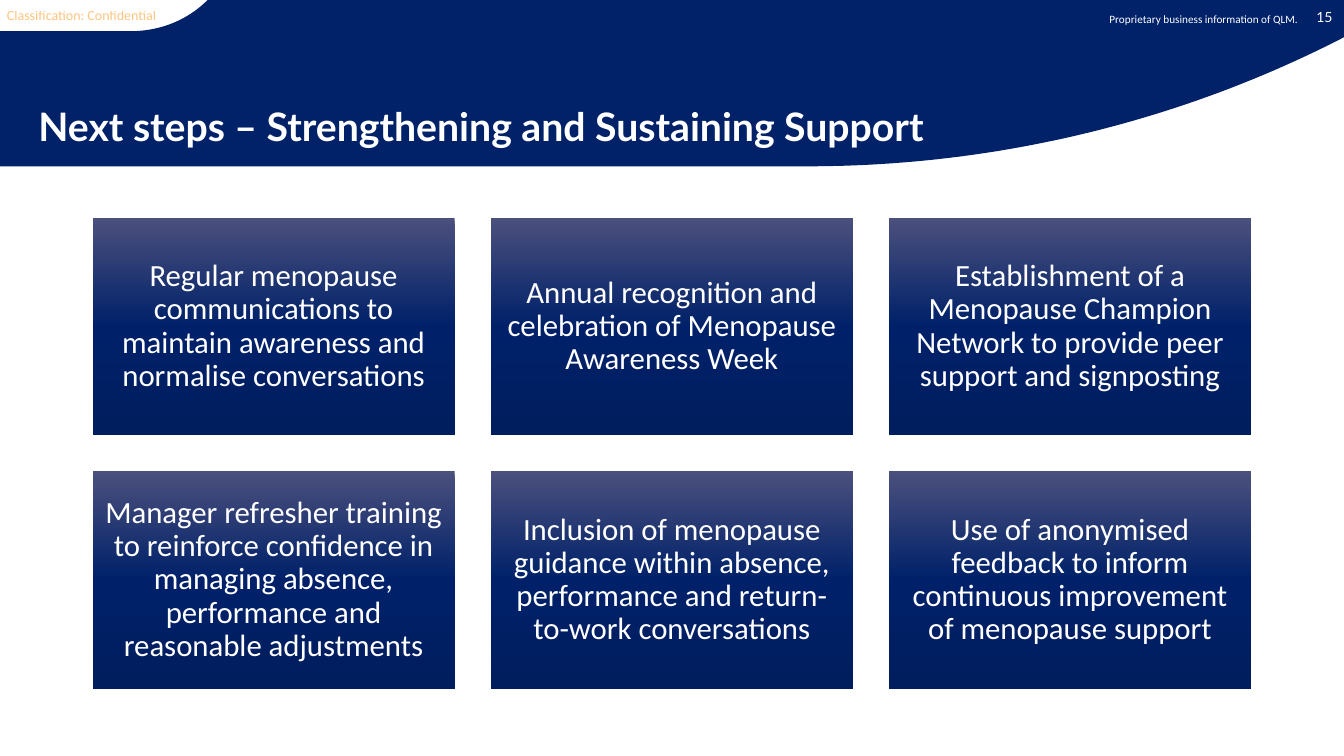
from copy import deepcopy

from lxml.etree import SubElement
from pptx import Presentation
from pptx.dml.color import RGBColor
from pptx.enum.shapes import MSO_SHAPE
from pptx.enum.text import MSO_ANCHOR, MSO_AUTO_SIZE, PP_ALIGN
from pptx.oxml.ns import qn
from pptx.util import Pt

COLORS = {
    "navy": "012169",
    "white": "FFFFFF",
    "orange": "FF8C00",
    "card_top": "4B507C",
    "card_middle": "00216A",
    "card_bottom": "001D5E",
}

NEXT_STEPS = [
    "Regular menopause communications to maintain awareness and normalise conversations",
    "Annual recognition and celebration of Menopause Awareness Week",
    "Establishment of a Menopause Champion Network to provide peer support and signposting",
    "Manager refresher training to reinforce confidence in managing absence, "
    "performance and reasonable adjustments",
    "Inclusion of menopause guidance within absence, performance and return-to-work conversations",
    "Use of anonymised feedback to inform continuous improvement of menopause support",
]


def color(name):
    return RGBColor.from_string(COLORS[name])


def write_text(shape, text, size=10, font="Calibri", fill="white", opacity=None, bold=False,
               align=PP_ALIGN.LEFT, anchor=MSO_ANCHOR.TOP, insets=(0, 0), line_spacing=1.0):
    """Fill a shape with one formatted paragraph; insets are (side, top and bottom)."""
    frame = shape.text_frame
    frame.word_wrap = True
    frame.auto_size = MSO_AUTO_SIZE.NONE
    frame.vertical_anchor = anchor
    frame.margin_left = frame.margin_right = Pt(insets[0])
    frame.margin_top = frame.margin_bottom = Pt(insets[1])
    paragraph = frame.paragraphs[0]
    paragraph.alignment = align
    paragraph.line_spacing = line_spacing
    run = paragraph.add_run()
    run.text = text
    run.font.name = font
    run.font.size = Pt(size)
    run.font.bold = bold
    run.font.color.rgb = color(fill)
    if opacity is not None:
        color_element = run.font._element.find(".//" + qn("a:srgbClr"))
        SubElement(color_element, qn("a:alpha"), val=str(opacity * 1000))


def curve(start, control_1, control_2, end, steps=48):
    """Points along a cubic curve, after its start."""
    points = []
    for step in range(1, steps + 1):
        t = step / steps
        weights = ((1 - t) ** 3, 3 * t * (1 - t) ** 2, 3 * t ** 2 * (1 - t), t ** 3)
        corners = (start, control_1, control_2, end)
        points.append(tuple(sum(w * corner[axis] for w, corner in zip(weights, corners))
                            for axis in (0, 1)))
    return points


class SlideBuilder:
    gradient = [(0, "card_top"), (0.5, "card_middle"), (1, "card_bottom")]

    def __init__(self, slide):
        self.slide = slide

    def banner(self, start, points):
        builder = self.slide.shapes.build_freeform(Pt(start[0]), Pt(start[1]), scale=1.0)
        builder.add_line_segments([(Pt(x), Pt(y)) for x, y in points], close=True)
        shape = builder.convert_to_shape()
        shape.shadow.inherit = False
        shape.fill.solid()
        shape.fill.fore_color.rgb = color("navy")
        shape.line.fill.background()

    def title(self, text, left, top, width, height, **text_format):
        shape = self.slide.shapes.title
        shape.left, shape.top, shape.width, shape.height = map(Pt, (left, top, width, height))
        write_text(shape, text, **text_format)

    def label(self, text, left, top, width, height, **text_format):
        shape = self.slide.shapes.add_textbox(*map(Pt, (left, top, width, height)))
        write_text(shape, text, **text_format)

    def card(self, text, left, top, width, height):
        shape = self.slide.shapes.add_shape(
            MSO_SHAPE.RECTANGLE, *map(Pt, (left, top, width, height)))
        shape.shadow.inherit = False
        shape.line.fill.background()
        shape.fill.gradient()
        shape.fill.gradient_angle = 270
        # The default gradient has two stops; a third is added
        stop_list = shape._element.spPr.find(".//" + qn("a:gsLst"))
        stop_list.append(deepcopy(stop_list[0]))
        for stop, (position, name) in zip(shape.fill.gradient_stops, self.gradient):
            stop.position = position
            stop.color.rgb = color(name)
        write_text(shape, text, size=22, align=PP_ALIGN.CENTER, anchor=MSO_ANCHOR.MIDDLE,
                   insets=(6.6, 6.6), line_spacing=0.9)


def main():
    presentation = Presentation()
    presentation.slide_width, presentation.slide_height = Pt(960), Pt(540)
    slide = presentation.slides.add_slide(presentation.slide_layouts[5])
    builder = SlideBuilder(slide)

    # Header banner with the classification tab cut out
    tab_start, tab_end = (148.3, 0), (92.9, 22.3)
    sweep_start, sweep_end = (576.7, 118.8), (960, 26.6)
    builder.banner(tab_start, [
        *curve(tab_start, (133.9, 14.4), (114.5, 22.3), tab_end),
        (0, 22.3), (0, 118.8), sweep_start,
        *curve(sweep_start, (714.2, 118.8), (845.3, 85.7), sweep_end),
        (960, 0),
    ])

    # Header labels
    builder.label("Classification: Confidential", 5, 5, 109.4, 12.2, fill="orange", opacity=50)
    builder.label("Proprietary business information of QLM.", 775.4, 5, 159.1, 21.6,
                  size=8, align=PP_ALIGN.RIGHT, insets=(7.2, 3.6))
    builder.label("15", 923, 5.8, 46.1, 12.2, font="Lato",
                  align=PP_ALIGN.CENTER, anchor=MSO_ANCHOR.MIDDLE)

    # Title, brought in front of the banner
    builder.title("Next steps – Strengthening and Sustaining Support", 27.4, 73.4, 738.7, 33.8,
                  size=28, font="Lato", bold=True)
    slide.shapes._spTree.append(slide.shapes.title._element)

    # Grid of next steps
    columns, gap, card_width, card_height = 3, 25.85, 258.6, 155.2
    for index, step in enumerate(NEXT_STEPS):
        row, column = divmod(index, columns)
        builder.card(step, 66.1 + column * (card_width + gap),
                     155.6 + row * (card_height + gap), card_width, card_height)

    presentation.save("out.pptx")


if __name__ == "__main__":
    main()
